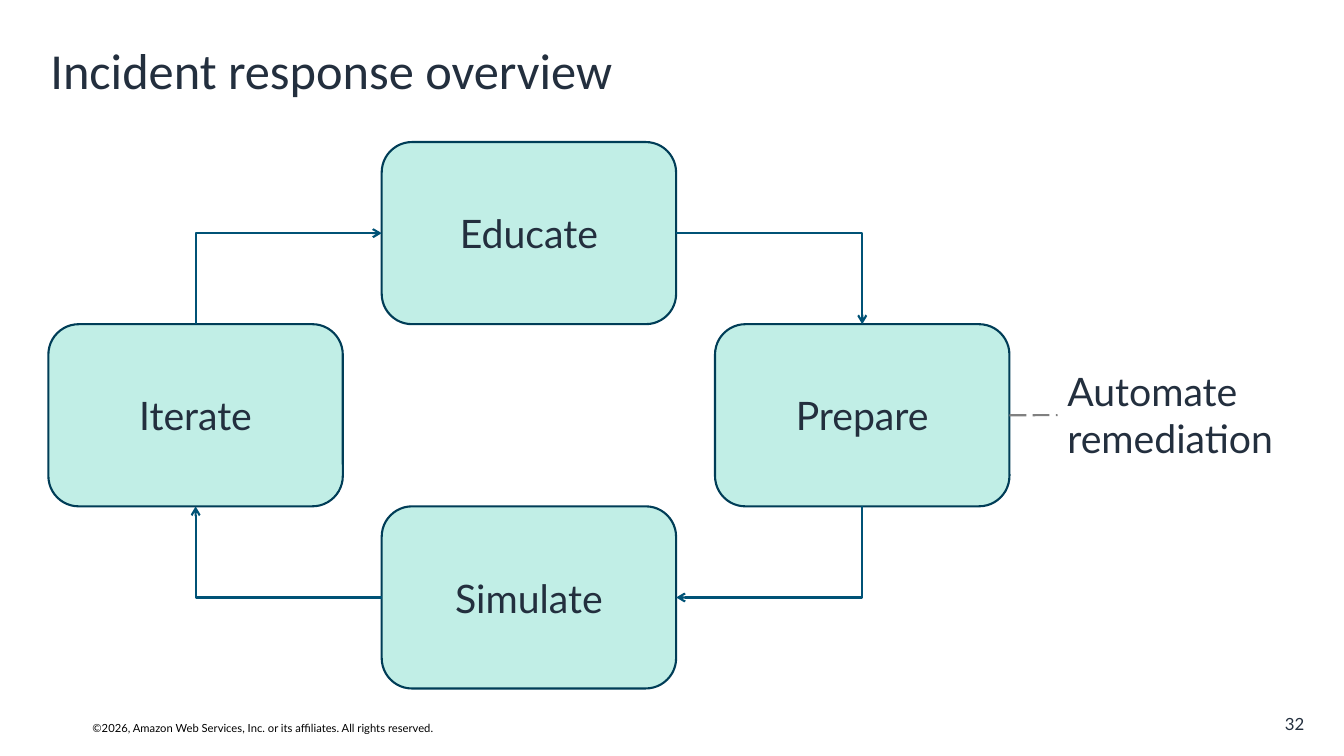
from lxml.etree import SubElement
from pptx import Presentation
from pptx.dml.color import RGBColor
from pptx.enum.dml import MSO_LINE as Dash
from pptx.enum.shapes import MSO_CONNECTOR as Link, MSO_SHAPE as Form
from pptx.enum.text import MSO_ANCHOR as Anchor, PP_ALIGN as Align
from pptx.oxml.ns import qn
from pptx.util import Cm, Pt

deck = Presentation()
deck.slide_width, deck.slide_height = Cm(33.87), Cm(19.05)
slide = deck.slides.add_slide(deck.slide_layouts[6])
shapes = slide.shapes


def tint(code):
    return RGBColor.from_string(code)


def write(shape, text, size=28, face="Lato", color="232F3E", align=Align.LEFT,
          anchor=Anchor.TOP, wrap=True, inset=None, space=None):
    frame = shape.text_frame
    frame.word_wrap = wrap
    frame.vertical_anchor = anchor
    if inset is not None:
        frame.margin_left = frame.margin_right = Cm(inset)
        frame.margin_top = frame.margin_bottom = Cm(inset)
    frame.text = text
    for para in frame.paragraphs:
        para.alignment = align
        para.line_spacing = space
        font = para.font
        font.name, font.size = face, Pt(size)
        font.color.rgb = tint(color)


title = shapes.add_textbox(Cm(1.02), Cm(0.84), Cm(31.85), Cm(2.03))
write(title, "Incident response overview", size=36, face="Calibri",
      anchor=Anchor.MIDDLE, space=0.9)
legal = shapes.add_textbox(Cm(2.08), Cm(18.06), Cm(9.5), Cm(0.61))
write(legal, "©2026, Amazon Web Services, Inc. or its affiliates. All rights reserved.",
      size=8, color="000000", wrap=False)
number = shapes.add_textbox(Cm(31.52), Cm(17.91), Cm(1.35), Cm(0.64))
write(number, "32", size=12, align=Align.RIGHT, anchor=Anchor.MIDDLE, inset=0)

wide, high = 7.42, 4.59
left, top, step = 1.22, 3.58, 8.4
steps = []
for name, col, row in [("Educate", 1, 0), ("Prepare", 2, 1),
                       ("Simulate", 1, 2), ("Iterate", 0, 1)]:
    box = shapes.add_shape(Form.ROUNDED_RECTANGLE, Cm(left + col * step),
                           Cm(top + row * high), Cm(wide), Cm(high))
    box.shadow.inherit = False
    box.fill.solid()
    box.fill.fore_color.rgb = tint("C1EEE6")
    box.line.color.rgb = tint("003D57")
    box.line.width = Pt(1.5)
    write(box, name, align=Align.CENTER, anchor=Anchor.MIDDLE)
    steps.append(box)

note = shapes.add_textbox(Cm(26.65), Cm(9.14), Cm(6.1), Cm(2.64))
write(note, "Automate\nremediation")

joins = [(steps[i], out, steps[(i + 1) % 4], into, Link.ELBOW, "005276")
         for i, (out, into) in enumerate([(3, 0), (2, 3), (1, 2), (0, 1)])]
joins.append((steps[1], 3, note, 1, Link.STRAIGHT, "808080"))
for turn, (start, out, end, into, kind, color) in enumerate(joins):
    link = shapes.add_connector(kind, 0, 0, 0, 0)
    link.begin_connect(start, out)
    link.end_connect(end, into)
    link.line.color.rgb = tint(color)
    link.line.width = Pt(1.5)
    props = link._element.spPr
    if kind == Link.STRAIGHT:
        link.line.dash_style = Dash.LONG_DASH
    else:
        SubElement(link.line._get_or_add_ln(), qn("a:tailEnd"), type="arrow")
        props.find(qn("a:prstGeom")).set("prst", "bentConnector2")
        frame = props.find(qn("a:xfrm"))
        frame.set("rot", str(turn * 5400000))
        frame.set("flipH", "0")
        frame.set("flipV", "0")
        if turn % 2:
            shift = (link.width - link.height) // 2
            link.left, link.top = link.left + shift, link.top - shift
            link.width, link.height = link.height, link.width
    SubElement(props, qn("a:effectLst"))

deck.save("out.pptx")
